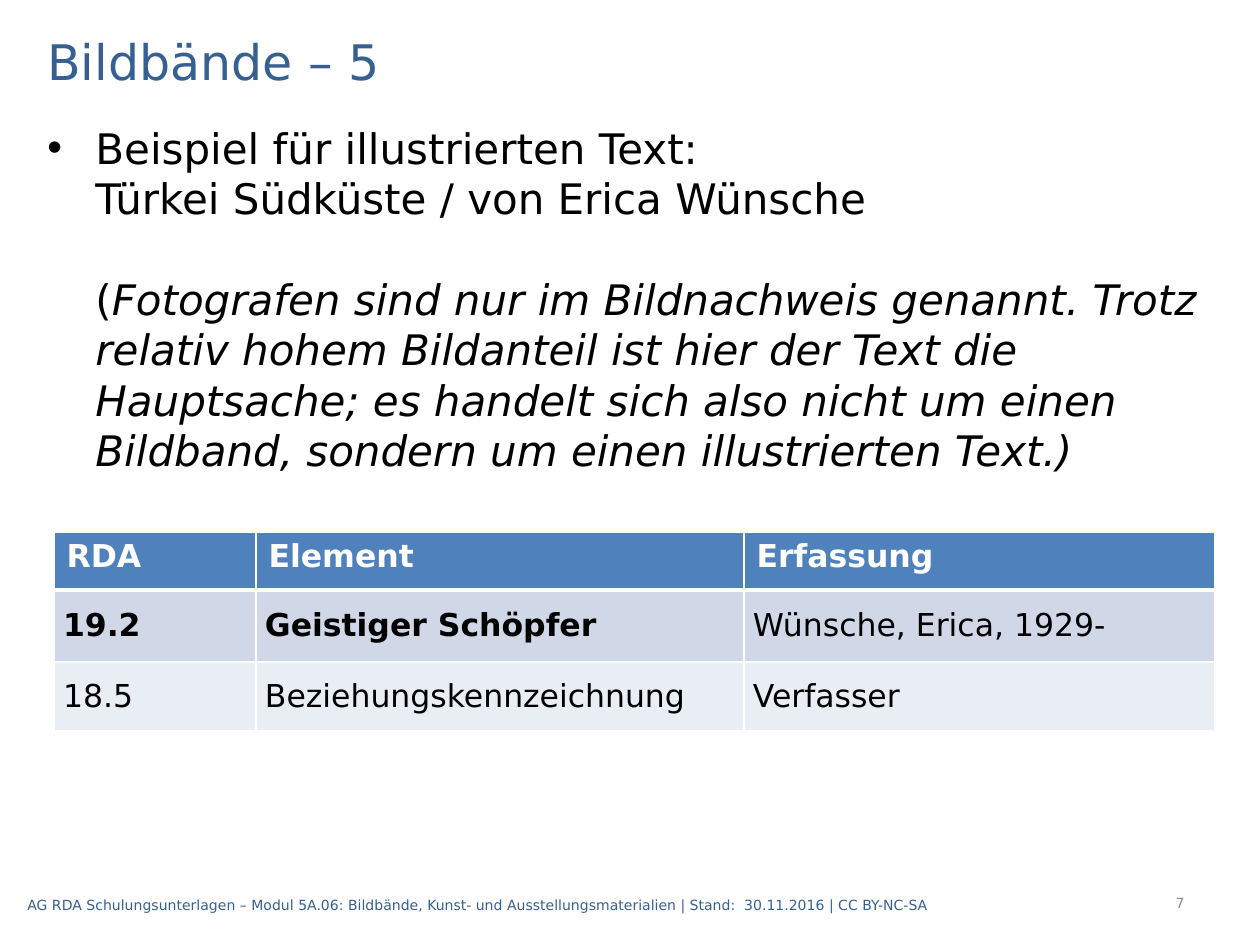
from lxml import etree
from pptx import Presentation
from pptx.dml.color import RGBColor
from pptx.enum.text import MSO_ANCHOR, PP_ALIGN
from pptx.oxml.ns import qn
from pptx.util import Emu, Pt

MIDDLE, TOP = MSO_ANCHOR.MIDDLE, MSO_ANCHOR.TOP
LEFT, RIGHT = PP_ALIGN.LEFT, PP_ALIGN.RIGHT
FONT = "DejaVu Sans"
BLUE, BLACK, WHITE, GREY = "376092", "000000", "FFFFFF", "8C8C8C"
HEADER_FILL, ROW_FILLS = "4F81BD", ("D0D8E8", "E9EDF4")


def px(n):
    return Emu(round(n * 914400 / 126))


def rgb(value):
    return RGBColor.from_string(value)


def add_run(p, text, size, color, **formats):
    r = p.add_run()
    r.text = text
    for name, value in {"name": FONT, "size": Pt(size), **formats}.items():
        setattr(r.font, name, value)
    r.font.color.rgb = rgb(color)


def add_box(s, box, anchor=MIDDLE):
    tf = s.shapes.add_textbox(*map(px, box)).text_frame
    tf.word_wrap = True
    tf.vertical_anchor = anchor
    return tf


def add_line(s, box, text, size, color, align=LEFT):
    p = add_box(s, box).paragraphs[0]
    p.alignment = align
    add_run(p, text, size, color)


def add_body(s, box, lines, remark):
    p = add_box(s, box, TOP).paragraphs[0]
    p.space_before = Pt(4.8)
    # Hanging bullet
    pPr = p._p.get_or_add_pPr()
    pPr.set("marL", str(px(48)))
    pPr.set("indent", str(-px(48)))
    etree.SubElement(pPr, qn("a:buFont"), typeface="Arial")
    etree.SubElement(pPr, qn("a:buChar"), char="•")
    for line in lines:
        if line:
            add_run(p, line, 24, BLACK)
        p.add_line_break()
    # Line breaks take the size of the text
    for br in p._p.findall(qn("a:br")):
        etree.SubElement(br, qn("a:rPr"), sz="2400")
    add_run(p, "(", 24, BLACK)
    add_run(p, remark, 24, BLACK, italic=True)


def add_borders(cell, **widths):
    tcPr = cell._tc.get_or_add_tcPr()
    for side in "LRTB":
        ln = etree.SubElement(tcPr, qn(f"a:ln{side}"), w=str(Pt(widths.get(side, 1))))
        fill = etree.SubElement(ln, qn("a:solidFill"))
        etree.SubElement(fill, qn("a:srgbClr"), val=WHITE)


def add_rda_table(s, box, cols, heights, rows):
    table = s.shapes.add_table(len(rows), len(cols), *map(px, box)).table
    for col, width in zip(table.columns, cols):
        col.width = px(width)
    for i, (values, height) in enumerate(zip(rows, heights)):
        table.rows[i].height = px(height)
        for j, value in enumerate(values):
            cell = table.cell(i, j)
            p = cell.text_frame.paragraphs[0]
            if i == 0:
                add_borders(cell, B=3)
                fill, color = HEADER_FILL, WHITE
            else:
                add_borders(cell, T=3 if i == 1 else 1)
                fill, color = ROW_FILLS[(i - 1) % 2], BLACK
                cell.vertical_anchor = MIDDLE
                cell.margin_left = cell.margin_right = px(9)
                cell.margin_top = cell.margin_bottom = 0
                p.space_after = Pt(6)
            cell.fill.solid()
            cell.fill.fore_color.rgb = rgb(fill)
            # Header and the core element are bold
            add_run(p, value, 18, color, bold=i == 0 or (i == 1 and j < 2))


def main():
    prs = Presentation()
    prs.slide_width, prs.slide_height = px(1260), px(945)
    s = prs.slides.add_slide(prs.slide_layouts[6])

    # Title and body
    add_line(s, (35, 25, 1191, 71), "Bildbände – 5", 28, BLUE)
    add_body(
        s, (35, 116, 1191, 753),
        ["Beispiel für illustrierten Text: ", "Türkei Südküste / von Erica Wünsche", ""],
        "Fotografen sind nur im Bildnachweis genannt. Trotz relativ hohem "
        "Bildanteil ist hier der Text die Hauptsache; es handelt sich also nicht "
        "um einen Bildband, sondern um einen illustrierten Text.)",
    )

    # Footer and page number
    add_line(s, (997, 878, 200, 50), "7", 8, GREY, RIGHT)
    add_line(
        s, (15, 880, 1160, 50),
        "AG RDA Schulungsunterlagen – Modul 5A.06: Bildbände, Kunst- und "
        "Ausstellungsmaterialien | Stand:  30.11.2016 | CC BY-NC-SA", 8, BLUE,
    )

    # Table of RDA elements
    add_rda_table(
        s, (54, 532, 1161, 199), (202, 488, 471), (58, 72, 69),
        [
            ("RDA", "Element", "Erfassung"),
            ("19.2", "Geistiger Schöpfer", "Wünsche, Erica, 1929-"),
            ("18.5", "Beziehungskennzeichnung", "Verfasser"),
        ],
    )
    prs.save("out.pptx")


if __name__ == "__main__":
    main()
